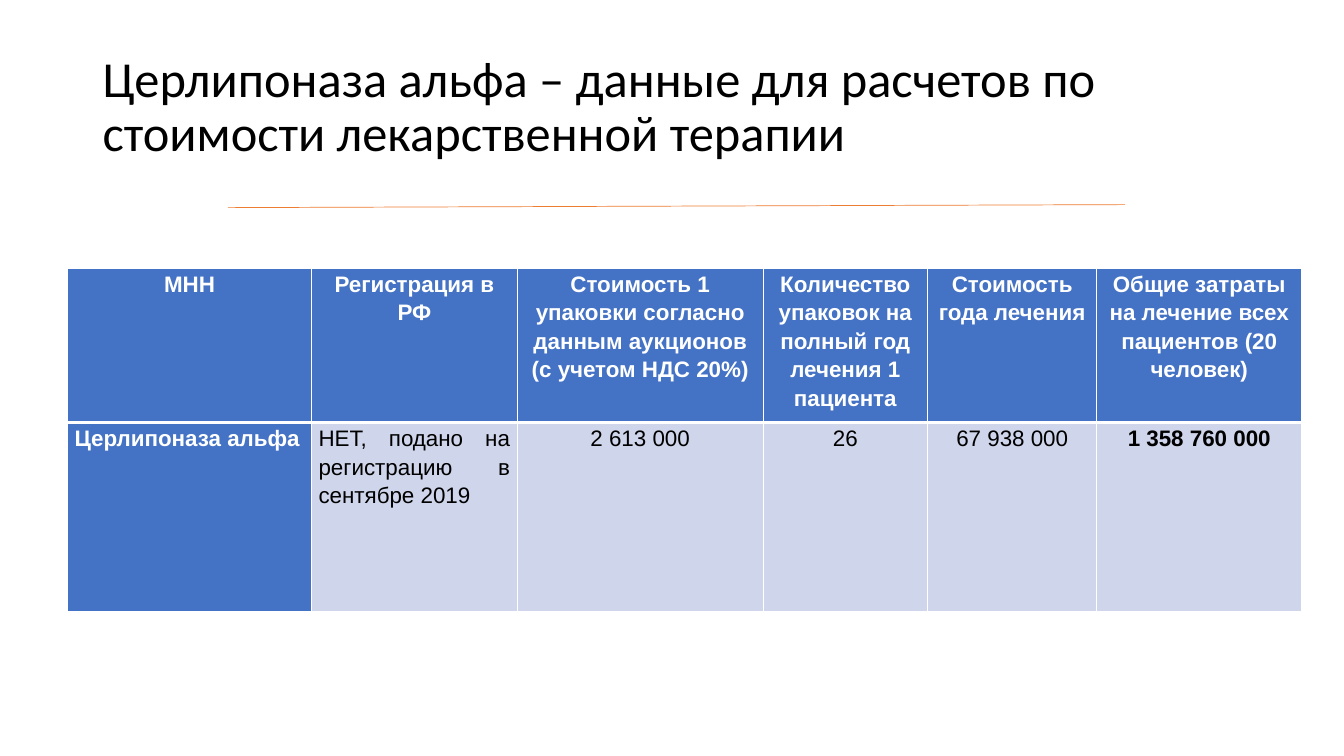
from lxml import etree
from pptx import Presentation
from pptx.dml.color import RGBColor
from pptx.enum import shapes, text
from pptx.oxml import ns
from pptx.util import Inches, Pt

COLORS = {"text": "000000", "white": "FFFFFF", "rule": "ED7D31",
          "header": "4472C4", "body": "CFD5EA"}
COLUMN_WIDTHS = [2.42, 2.04, 2.44, 1.63, 1.68, 2.03]
ROW_HEIGHTS = [1.46, 1.88]
ROWS = [
    ["МНН", "Регистрация в РФ",
     "Стоимость 1 упаковки согласно данным аукционов (c учетом НДС 20%)",
     "Количество упаковок на полный год лечения 1 пациента",
     "Стоимость года лечения",
     "Общие затраты на лечение всех пациентов (20 человек)"],
    ["Церлипоназа альфа", "НЕТ, подано на регистрацию в сентябре 2019",
     "2 613 000", "26", "67 938 000", "1 358 760 000"],
]


def color(name):
    return RGBColor.from_string(COLORS[name])


def format_text(paragraph, font_name, size, color_name, bold=False):
    for run in paragraph.runs:
        run.font.name = font_name
        run.font.size = Pt(size)
        run.font.bold = bold
        run.font.color.rgb = color(color_name)


def add_title(slide, left, top, width, height):
    box = slide.shapes.add_textbox(Inches(left), Inches(top), Inches(width), Inches(height))
    frame = box.text_frame
    frame.word_wrap = True
    frame.vertical_anchor = text.MSO_ANCHOR.MIDDLE
    frame.text = "Церлипоназа альфа – данные для расчетов по стоимости лекарственной терапии"
    paragraph = frame.paragraphs[0]
    paragraph.line_spacing = 0.9
    format_text(paragraph, "Calibri", 36, "text")


def add_rule(slide, left, top, width, height):
    """Draw the thin line that rises slightly to the right."""
    rule = slide.shapes.add_connector(
        shapes.MSO_CONNECTOR.STRAIGHT, Inches(left + width), Inches(top),
        Inches(left), Inches(top + height))
    rule.line.color.rgb = color("rule")
    rule.line.width = Pt(0.5)
    etree.SubElement(rule._element.spPr, ns.qn("a:effectLst"))


def set_borders(cell, widths):
    """Give the cell white borders; widths maps each side to points."""
    properties = cell._tc.get_or_add_tcPr()
    for side, width in widths.items():
        line = etree.SubElement(properties, ns.qn(f"a:ln{side}"), w=str(Pt(width)))
        fill = etree.SubElement(line, ns.qn("a:solidFill"))
        etree.SubElement(fill, ns.qn("a:srgbClr"), val=COLORS["white"])


def fill_cell(cell, row, column, wording):
    is_header = row == 0
    is_label = is_header or column == 0
    is_total = column == len(COLUMN_WIDTHS) - 1
    set_borders(cell, {"L": 1, "R": 1, "T": 1 if is_header else 3, "B": 3 if is_header else 1})
    cell.fill.solid()
    cell.fill.fore_color.rgb = color("header" if is_label else "body")
    cell.margin_left = cell.margin_right = Inches(0.07)
    cell.margin_top = cell.margin_bottom = 0
    cell.text_frame.text = wording
    paragraph = cell.text_frame.paragraphs[0]
    paragraph.line_spacing = 1.15
    justified = not is_header and column < 2
    paragraph.alignment = text.PP_ALIGN.JUSTIFY if justified else text.PP_ALIGN.CENTER
    format_text(paragraph, "Arial", 16, "white" if is_label else "text", is_label or is_total)


def add_cost_table(slide, left, top):
    frame = slide.shapes.add_table(
        len(ROWS), len(COLUMN_WIDTHS), Inches(left), Inches(top),
        Inches(sum(COLUMN_WIDTHS)), Inches(sum(ROW_HEIGHTS)))
    table = frame.table
    for column, width in zip(table.columns, COLUMN_WIDTHS):
        column.width = Inches(width)
    for row, height in zip(table.rows, ROW_HEIGHTS):
        row.height = Inches(height)
    for row, wordings in enumerate(ROWS):
        for column, wording in enumerate(wordings):
            fill_cell(table.cell(row, column), row, column, wording)


def main():
    presentation = Presentation()
    presentation.slide_width = Inches(13.33)
    presentation.slide_height = Inches(7.5)
    slide = presentation.slides.add_slide(presentation.slide_layouts[6])
    add_title(slide, 0.92, 0.35, 11.5, 1.45)
    add_rule(slide, 2.26, 2.03, 8.9, 0.03)
    add_cost_table(slide, 0.67, 2.66)
    presentation.save("out.pptx")


if __name__ == "__main__":
    main()
